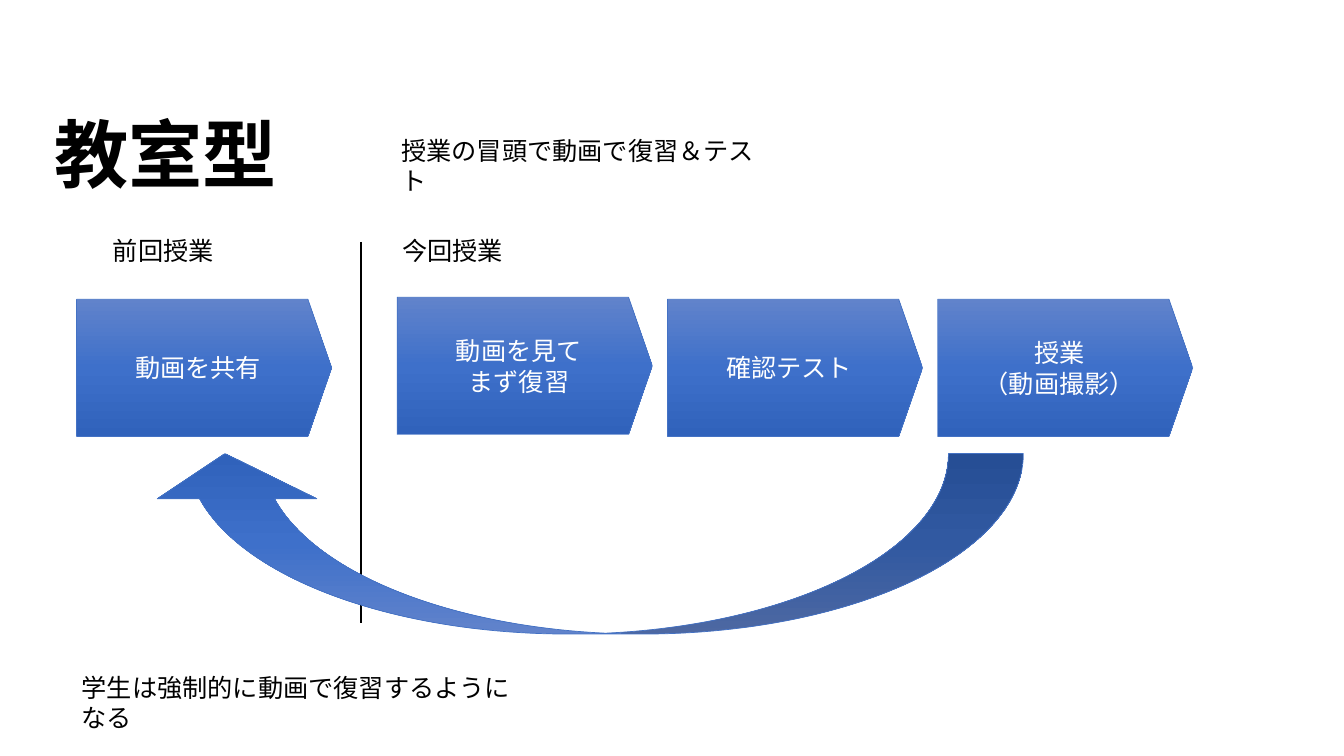
from copy import deepcopy

from lxml import etree
from pptx import Presentation
from pptx.dml.color import RGBColor
from pptx.enum.shapes import MSO_CONNECTOR, MSO_SHAPE
from pptx.enum.text import MSO_ANCHOR, PP_ALIGN
from pptx.oxml.ns import qn
from pptx.util import Inches, Pt

FONT = "Noto Sans CJK JP"
COLORS = {
    "text": "000000", "step_text": "FFFFFF", "outline": "4472C4",
    "top": "6183CB", "middle": "3E70CA", "bottom": "3062BB",
}
STEP_WIDTH, STEP_HEIGHT, STEP_PITCH = 2.53, 1.36, 2.68


def color(name):
    return RGBColor.from_string(COLORS[name])


def write(shape, text, size=18, ink="text", bold=False,
          align=PP_ALIGN.LEFT, anchor=MSO_ANCHOR.TOP):
    """Fill a shape with one paragraph per line of text."""
    frame = shape.text_frame
    settings = {
        "word_wrap": True, "vertical_anchor": anchor,
        "margin_left": Inches(0.13), "margin_right": Inches(0.13),
        "margin_top": Inches(0.07), "margin_bottom": Inches(0.07),
    }
    for name, value in settings.items():
        setattr(frame, name, value)
    frame.text = text
    for para in frame.paragraphs:
        para.alignment = align
        para.line_spacing = Pt(size * 1.2)
        for span in para.runs:
            font = span.font
            for name, value in {"name": FONT, "size": Pt(size), "bold": bold}.items():
                setattr(font, name, value)
            font.color.rgb = color(ink)
            latin = span._r.rPr.find(qn("a:latin"))
            east_asian = etree.Element(qn("a:ea"), typeface=FONT)
            latin.addnext(east_asian)


def add_label(page, text, left, top, width):
    box = page.shapes.add_textbox(*map(Inches, (left, top, width, 0.44)))
    write(box, text)


def add_blue_shape(page, kind, box, adjustments):
    """Add a preset shape with the three-stop blue gradient."""
    shape = page.shapes.add_shape(kind, *map(Inches, box))
    shape.shadow.inherit = False
    for index, value in enumerate(adjustments):
        shape.adjustments[index] = value
    shape.fill.gradient()
    shape.fill.gradient_angle = 270
    stop_list = shape._element.spPr.find(qn("a:gradFill")).find(qn("a:gsLst"))
    stop_list.append(deepcopy(stop_list[-1]))
    stops = zip(shape.fill.gradient_stops, (0, 0.5, 1), ("top", "middle", "bottom"))
    for stop, position, name in stops:
        stop.position = position
        stop.color.rgb = color(name)
    shape.line.color.rgb = color("outline")
    shape.line.width = Pt(0.5)
    return shape


def add_step(page, text, left, top):
    step = add_blue_shape(page, MSO_SHAPE.PENTAGON,
                          (left, top, STEP_WIDTH, STEP_HEIGHT), [0.173])
    write(step, text, ink="step_text", align=PP_ALIGN.CENTER, anchor=MSO_ANCHOR.MIDDLE)


def add_heading(page, left, top):
    title = page.shapes.title
    place = {"left": left, "top": top, "width": 2.51, "height": 1.03}
    for name, value in place.items():
        setattr(title, name, Inches(value))
    write(title, "教室型", size=53, bold=True)
    add_label(page, "授業の冒頭で動画で復習＆テスト", left + 3.44, top + 0.27, 3.86)


def add_previous_class(page, left, top):
    add_label(page, "前回授業", left + 0.23, top, 1.28)
    add_step(page, "動画を共有", left, top + 0.71)


def add_divider(page, left, top, height):
    line = page.shapes.add_connector(
        MSO_CONNECTOR.STRAIGHT, *map(Inches, (left, top, left, top + height)))
    line.line.color.rgb = color("text")
    line.line.width = Pt(1)
    etree.SubElement(line._element.spPr, qn("a:effectLst"))


def add_current_class(page, left, top):
    add_label(page, "今回授業", left - 0.08, top, 1.36)
    steps = [("動画を見て\nまず復習", 0.69), ("確認テスト", 0.71),
             ("授業\n（動画撮影）", 0.71)]
    for index, (text, drop) in enumerate(steps):
        add_step(page, text, left + index * STEP_PITCH, top + drop)


def add_return_arrow(page, left, top, width, height):
    arrow = add_blue_shape(page, MSO_SHAPE.CURVED_DOWN_ARROW,
                           (left, top, width, height), [0.415, 0.884, 0.25])
    arrow.rotation = 180


def main():
    deck = Presentation()
    deck.slide_width, deck.slide_height = Inches(13.33), Inches(7.5)
    page = deck.slides.add_slide(deck.slide_layouts[5])
    add_heading(page, 0.41, 1)
    add_previous_class(page, 0.76, 2.26)
    add_divider(page, 3.58, 2.4, 3.78)
    add_current_class(page, 3.94, 2.26)
    add_return_arrow(page, 1.44, 4.5, 8.71, 1.79)
    add_label(page, "学生は強制的に動画で復習するようになる", 0.68, 6.6, 4.53)
    deck.save("out.pptx")


if __name__ == "__main__":
    main()
